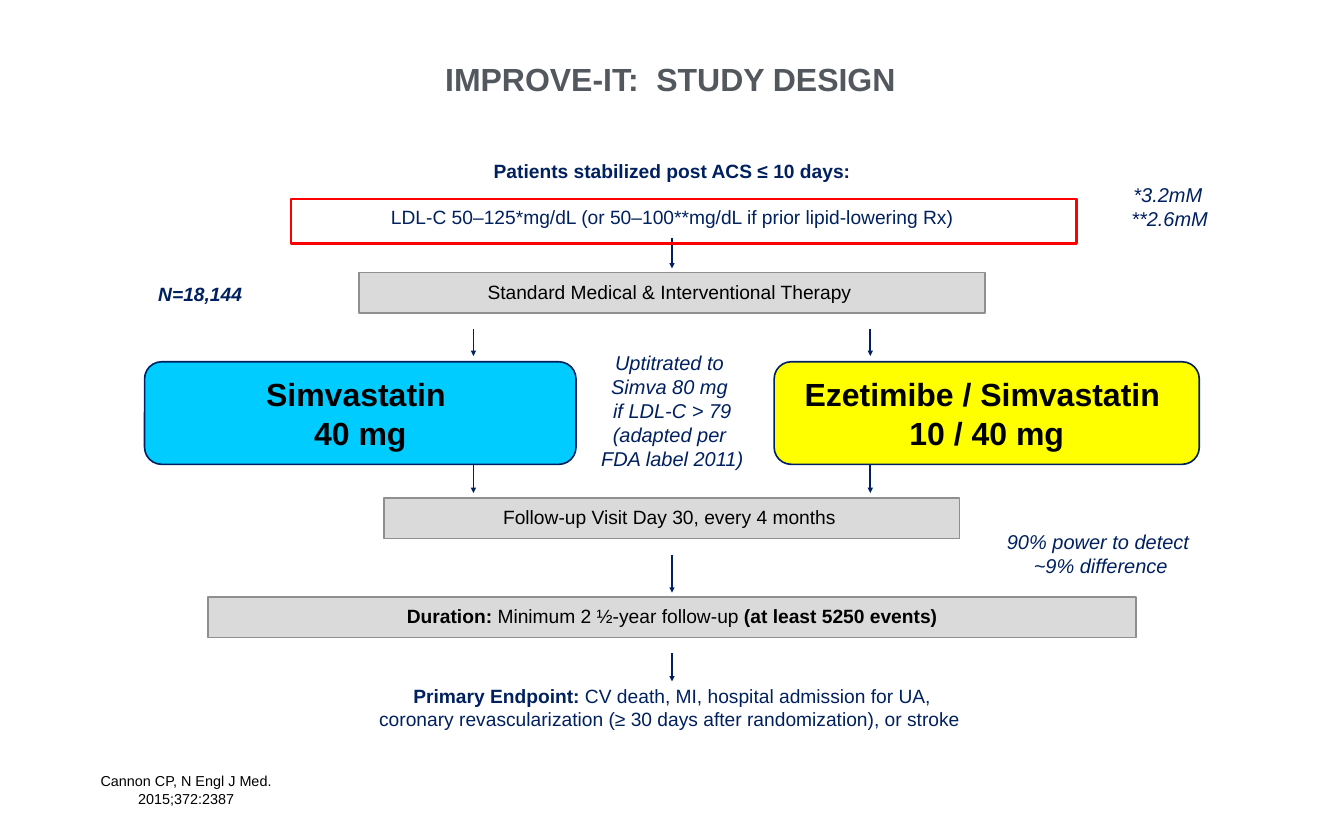
from dataclasses import dataclass
from typing import NamedTuple

from lxml import etree
from pptx import Presentation
from pptx.dml.color import RGBColor
from pptx.enum.shapes import MSO_CONNECTOR, MSO_SHAPE
from pptx.enum.text import MSO_ANCHOR, MSO_AUTO_SIZE, PP_ALIGN
from pptx.oxml.ns import qn
from pptx.shapes.autoshape import Shape
from pptx.slide import Slide
from pptx.util import Pt

RECT, ROUND = MSO_SHAPE.RECTANGLE, MSO_SHAPE.ROUNDED_RECTANGLE
STRAIGHT = MSO_CONNECTOR.STRAIGHT
TOP, MIDDLE = MSO_ANCHOR.TOP, MSO_ANCHOR.MIDDLE
FIT, FIXED = MSO_AUTO_SIZE.SHAPE_TO_FIT_TEXT, MSO_AUTO_SIZE.NONE
CENTER, RIGHT = PP_ALIGN.CENTER, PP_ALIGN.RIGHT

FONT = "Arial"
LEADING = 1.2
COLORS = {
    "title": "53585F", "navy": "002060", "black": "000000", "red": "FF0000",
    "gray": "DADADA", "edge": "8F8F8F", "yellow": "FFFF00", "cyan": "00CCFF",
}

WIDTH, HEIGHT = 1680, 1050
MID = WIDTH / 2
ARMS = (591.8, 1087.9)


class Box(NamedTuple):
    left: float
    top: float
    width: float
    height: float


class Part(NamedTuple):
    text: str
    bold: bool = False


Line = tuple[Part, ...]
Inset = tuple[float, float, float, float]
NOTE_PAD: Inset = (10.8, 5.8, 10.8, 5.8)
BAR_PAD: Inset = (10.8, 9.4, 10.8, 11.5)
PILL_PAD: Inset = (7.2, 3.6, 7.2, 3.6)


@dataclass
class Style:
    size: float = 24
    color: str = "navy"
    italic: bool = False
    align: PP_ALIGN = CENTER
    gap: float = 0


@dataclass
class Note:
    box: Box
    lines: list[Line]
    style: Style
    wrap: bool = True
    pad: Inset = NOTE_PAD


@dataclass
class Bar:
    top: float
    width: float
    line: Line


@dataclass
class Pill:
    box: Box
    fill: str
    text: str


@dataclass
class Arrow:
    x: float
    top: float
    end: float


def center(top: float, width: float, height: float) -> Box:
    return Box(MID - width / 2, top, width, height)


ASIDE = Style(25, italic=True)
NOTES = [
    Note(center(193.7, 734.4, 98),
         [(Part("Patients stabilized post ACS ≤ 10 days:", True),),
          (Part("LDL-C 50–125*mg/dL (or 50–100**mg/dL if prior lipid-lowering Rx)"),)],
         Style(gap=28.8)),
    Note(center(849.6, 761.8, 69.1),
         [(Part("Primary Endpoint:", True),
           Part(" CV death, MI, hospital admission for UA,")),
          (Part("coronary revascularization (≥ 30 days after randomization), or stroke "),)],
         Style(), wrap=False),
    Note(Box(197.3, 353.5, 105.8, 28.8), [(Part("N=18,144", True),)],
         Style(italic=True), wrap=False, pad=(0, 0, 0, 0)),
    Note(Box(698.4, 432, 283.7, 162.7),
         [(Part("Uptitrated to \vSimva 80 mg \vif LDL-C > 79"),),
          (Part("(adapted per \vFDA label 2011)"),)], ASIDE),
    Note(Box(1371.6, 221.8, 149, 71.3),
         [(Part("*3.2mM "),), (Part("**2.6mM"),)],
         Style(25, italic=True, align=RIGHT)),
    Note(Box(1246.3, 655.9, 259.2, 71.3),
         [(Part("90% power to detect "),), (Part("~9% difference"),)],
         ASIDE, wrap=False),
    Note(Box(56.2, 959.8, 352.8, 54.7),
         [(Part("Cannon CP, N Engl J Med. 2015;372:2387"),)], Style(18, "black")),
]
BARS = [
    Bar(340.6, 782.6, (Part("Standard Medical & Interventional Therapy "),)),
    Bar(622.8, 719.3, (Part("Follow-up Visit Day 30, every 4 months "),)),
    Bar(746.6, 1160.6, (Part("Duration:", True), Part(" Minimum 2 ½-year follow-up "),
                        Part("(at least 5250 events)", True))),
]
PILLS = [
    Pill(Box(967.7, 452.2, 531.4, 128.2), "yellow", "Ezetimibe / Simvastatin \v10 / 40 mg"),
    Pill(Box(180.7, 452.2, 539.3, 128.2), "cyan", "Simvastatin \v40 mg"),
]
ARROWS = [Arrow(x, top, end) for top, end in ((411.1, 445), (581.8, 616.3)) for x in ARMS]
ARROWS += [Arrow(MID, top, end)
           for top, end in ((297.4, 335.5), (693.4, 740.9), (816.5, 851.8))]


def rgb(name: str) -> RGBColor:
    return RGBColor.from_string(COLORS[name])


def write(shape: Shape, lines: list[Line], style: Style, pad: Inset,
          anchor: MSO_ANCHOR = TOP, wrap: bool = True, fit: MSO_AUTO_SIZE = FIT) -> None:
    frame = shape.text_frame
    frame.word_wrap, frame.auto_size, frame.vertical_anchor = wrap, fit, anchor
    (frame.margin_left, frame.margin_top,
     frame.margin_right, frame.margin_bottom) = map(Pt, pad)
    for i, line in enumerate(lines):
        para = frame.paragraphs[0] if i == 0 else frame.add_paragraph()
        para.alignment = style.align
        para.line_spacing = Pt(style.size * LEADING)
        para.space_before = Pt(style.gap if i else 0)
        font = para.font
        font.name, font.size, font.italic = FONT, Pt(style.size), style.italic
        font.color.rgb = rgb(style.color)
        if len(line) == 1:
            para.text, font.bold = line[0]
            continue
        for part in line:
            run = para.add_run()
            run.text, run.font.bold = part


def block(slide: Slide, kind: MSO_SHAPE, box: Box, fill: str | None,
          edge: str, weight: float) -> Shape:
    shape = slide.shapes.add_shape(kind, *map(Pt, box))
    shape.shadow.inherit = False
    if fill:
        shape.fill.solid()
        shape.fill.fore_color.rgb = rgb(fill)
    else:
        shape.fill.background()
    shape.line.color.rgb = rgb(edge)
    shape.line.width = Pt(weight)
    return shape


def draw_arrow(slide: Slide, arrow: Arrow) -> None:
    x = Pt(arrow.x)
    link = slide.shapes.add_connector(STRAIGHT, x, Pt(arrow.top), x, Pt(arrow.end))
    link.line.color.rgb = rgb("navy")
    link.line.width = Pt(2.25)
    etree.SubElement(link.line._get_or_add_ln(), qn("a:tailEnd"), type="triangle")
    etree.SubElement(link._element.spPr, qn("a:effectLst"))


def main() -> None:
    deck = Presentation()
    deck.slide_width, deck.slide_height = Pt(WIDTH), Pt(HEIGHT)
    slide = deck.slides.add_slide(deck.slide_layouts[5])

    title = slide.shapes.title
    title.left, title.top, title.width, title.height = map(Pt, (35.3, 28.8, 1605.6, 139))
    write(title, [(Part("IMPROVE-IT:  STUDY DESIGN", True),)], Style(40, "title"),
          (5, 5, 5, 5), MIDDLE, fit=FIXED)

    for bar in BARS:
        shape = block(slide, RECT, center(bar.top, bar.width, 50.4), "gray", "edge", 2)
        write(shape, [bar.line], Style(color="black"), BAR_PAD)
    for pill in PILLS:
        shape = block(slide, ROUND, pill.box, pill.fill, "navy", 2)
        write(shape, [(Part(pill.text, True),)], Style(40, "black"), PILL_PAD,
              MIDDLE, fit=FIXED)
    for note in NOTES:
        shape = slide.shapes.add_textbox(*map(Pt, note.box))
        write(shape, note.lines, note.style, note.pad, wrap=note.wrap)
    for arrow in ARROWS:
        draw_arrow(slide, arrow)
    block(slide, RECT, Box(363.6, 249.1, 982.1, 55.4), None, "red", 3)

    deck.save("out.pptx")


if __name__ == "__main__":
    main()
